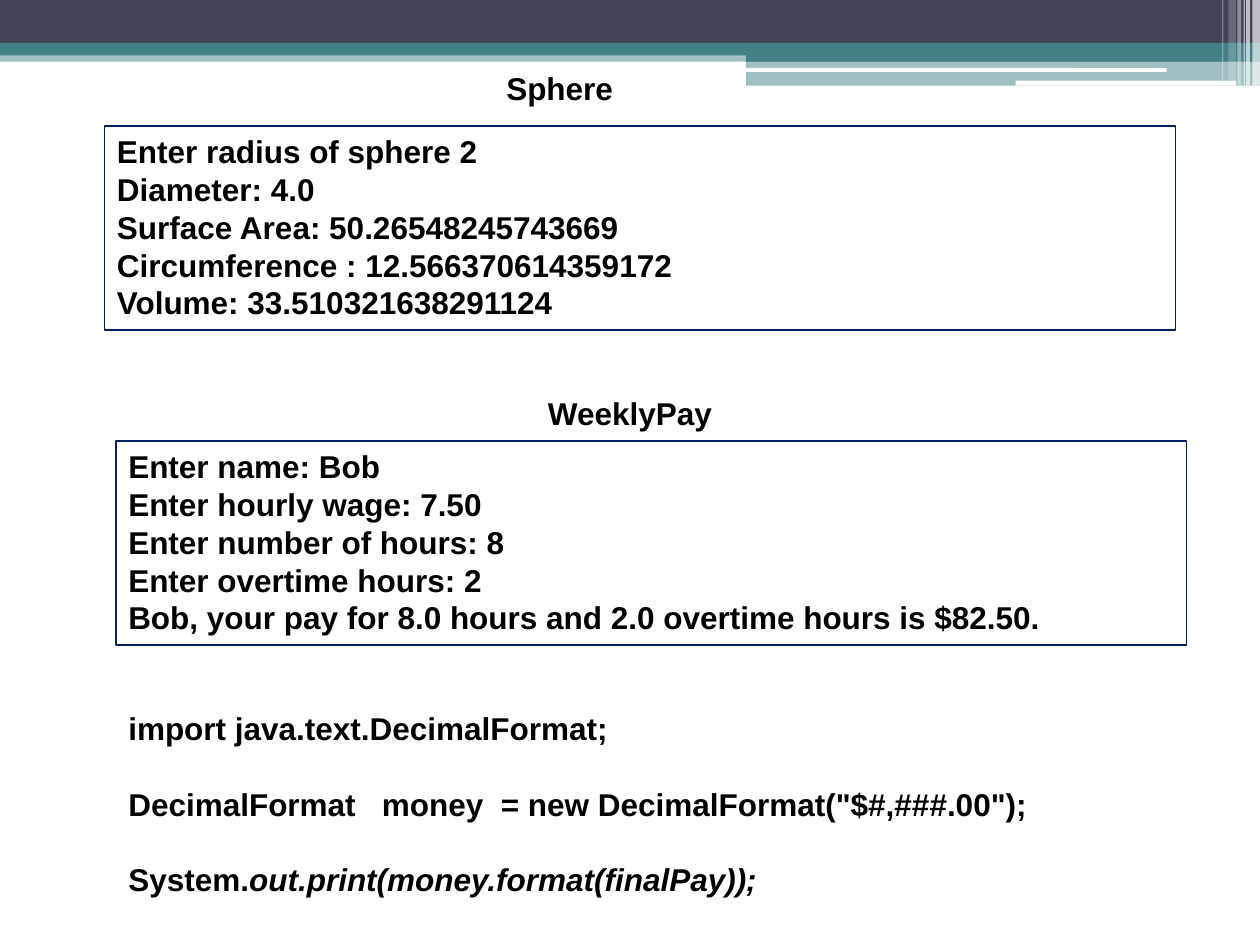
from lxml.etree import SubElement
from pptx import Presentation
from pptx.dml.color import RGBColor
from pptx.enum.shapes import MSO_SHAPE as Shape
from pptx.enum.text import MSO_ANCHOR as Anchor, MSO_AUTO_SIZE as AutoSize, PP_ALIGN as Align
from pptx.oxml.ns import qn
from pptx.util import Pt

PX = 9144
COLORS = {
    "slate": "424456",
    "teal": "438086",
    "white": "FFFFFF",
    "navy": "002060",
    "black": "000000",
}
FONT = {"name": "Arial", "size": Pt(18), "bold": True}
FRAME = {"word_wrap": True, "auto_size": AutoSize.NONE, "vertical_anchor": Anchor.TOP}
BANDS = [
    (0, 40, 1000, 9, "teal", 50),
    (0, 0, 1000, 34, "slate", 100),
    (0, 34, 1000, 10, "teal", 100),
    (592, 39, 408, 10, "teal", 100),
    (592, 48, 408, 20, "teal", 50),
]
GROOVES = [(591, 54, 335, 3), (806, 64, 175, 4)]
STRIPES = [
    (994, 6, 68, 65),
    (989, 3, 68, 65),
    (987, 1, 68, 60),
    (982, 3, 68, 40),
    (975, 6, 64, 20),
    (970, 1, 64, 30),
]
SPHERE_OUTPUT = [
    "Enter radius of sphere 2",
    "Diameter: 4.0",
    "Surface Area: 50.26548245743669",
    "Circumference : 12.566370614359172",
    "Volume: 33.510321638291124",
]
PAY_OUTPUT = [
    "Enter name: Bob",
    "Enter hourly wage: 7.50",
    "Enter number of hours: 8",
    "Enter overtime hours: 2",
    "Bob, your pay for 8.0 hours and 2.0 overtime hours is $82.50.",
]
CODE = [
    [("import java.text.DecimalFormat;", False)],
    [('DecimalFormat   money  = new DecimalFormat("$#,###.00");', False)],
    [("System.", False), ("out.print(money.format(finalPay));", True)],
]


def rgb(name):
    return RGBColor.from_string(COLORS[name])


def to_emu(box):
    return [length * PX for length in box]


def apply_format(target, values):
    for name, value in values.items():
        setattr(target, name, value)


def add_block(slide, box, color, opacity=100, kind=Shape.RECTANGLE):
    shape = slide.shapes.add_shape(kind, *to_emu(box))
    shape.shadow.inherit = False
    shape.line.fill.background()
    shape.fill.solid()
    shape.fill.fore_color.rgb = rgb(color)
    if opacity < 100:
        color_element = shape.fill._xPr.find(qn("a:solidFill"))[0]
        SubElement(color_element, qn("a:alpha"), val=str(opacity * 1000))


def add_header(slide, box):
    left, top, _, _ = box
    for x, y, width, height, color, opacity in BANDS:
        add_block(slide, (left + x, top + y, width, height), color, opacity)
    for x, y, width, height in GROOVES:
        add_block(slide, (left + x, top + y, width, height), "white", kind=Shape.ROUNDED_RECTANGLE)
    for x, width, height, opacity in STRIPES:
        add_block(slide, (left + x, top, width, height), "white", opacity)


def write_lines(shape, lines, paragraph_format=None, frame_format=None):
    frame = shape.text_frame
    apply_format(frame, FRAME | (frame_format or {}))
    for index, runs in enumerate(lines):
        paragraph = frame.add_paragraph() if index else frame.paragraphs[0]
        paragraph.alignment = Align.LEFT
        if index:
            apply_format(paragraph, paragraph_format or {})
        for text, italic in runs:
            run = paragraph.add_run()
            run.text = text
            apply_format(run.font, FONT | {"italic": italic})
            run.font.color.rgb = rgb("black")


def add_heading(slide, box, text, wrap=True):
    shape = slide.shapes.add_textbox(*to_emu(box))
    write_lines(shape, [[(text, False)]], frame_format={"word_wrap": wrap})


def add_output(slide, box, lines):
    shape = slide.shapes.add_shape(Shape.RECTANGLE, *to_emu(box))
    shape.shadow.inherit = False
    shape.fill.background()
    shape.line.color.rgb = rgb("navy")
    shape.line.width = Pt(0.75)
    write_lines(shape, [[(line, False)] for line in lines])


def add_code(slide, box):
    shape = slide.shapes.add_textbox(*to_emu(box))
    write_lines(shape, CODE, {"space_before": Pt(21.5)})


def main():
    presentation = Presentation()
    apply_format(presentation, {"slide_width": 1000 * PX, "slide_height": 750 * PX})
    slide = presentation.slides.add_slide(presentation.slide_layouts[6])
    add_header(slide, (0, 0, 1000, 68))
    add_output(slide, (92, 350, 850, 162), PAY_OUTPUT)
    add_output(slide, (83, 100, 850, 162), SPHERE_OUTPUT)
    add_heading(slide, (392, 50, 500, 40), "Sphere")
    add_heading(slide, (425, 308, 152, 40), "WeeklyPay", wrap=False)
    add_code(slide, (92, 558, 842, 162))
    presentation.save("out.pptx")


if __name__ == "__main__":
    main()
